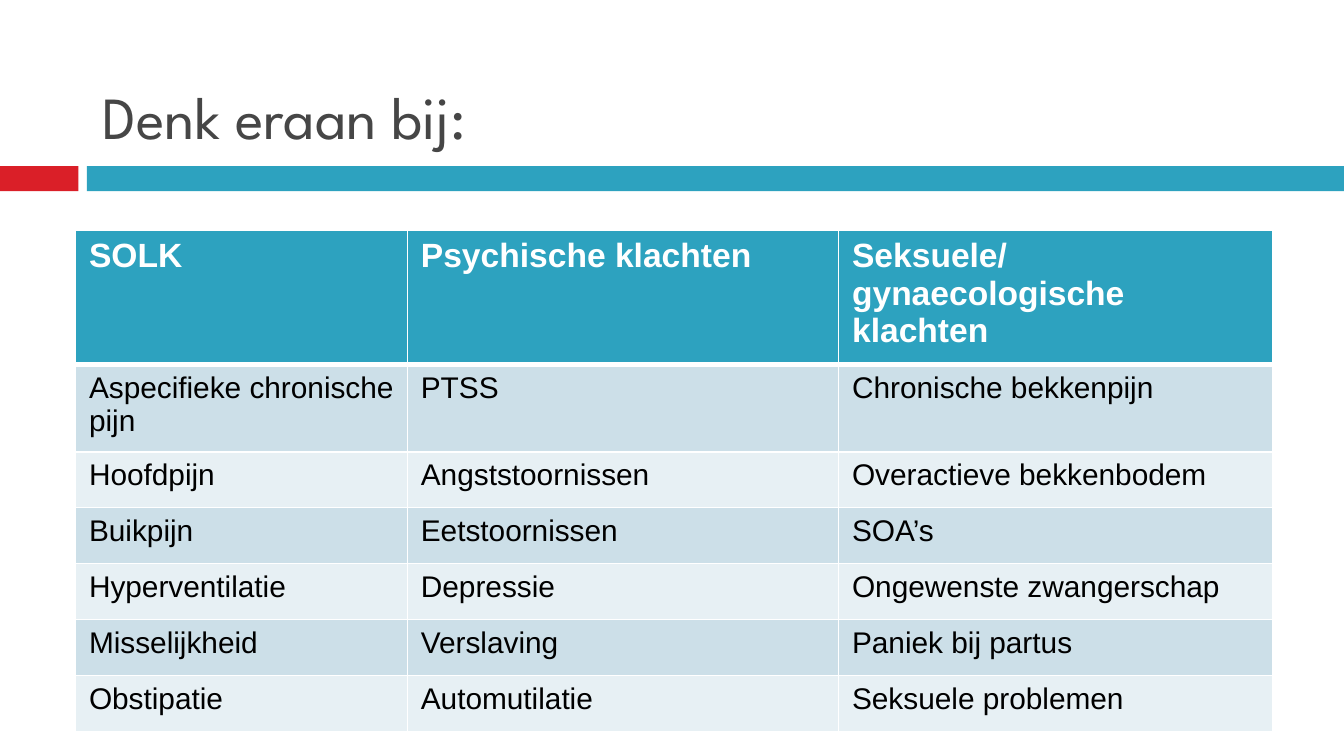
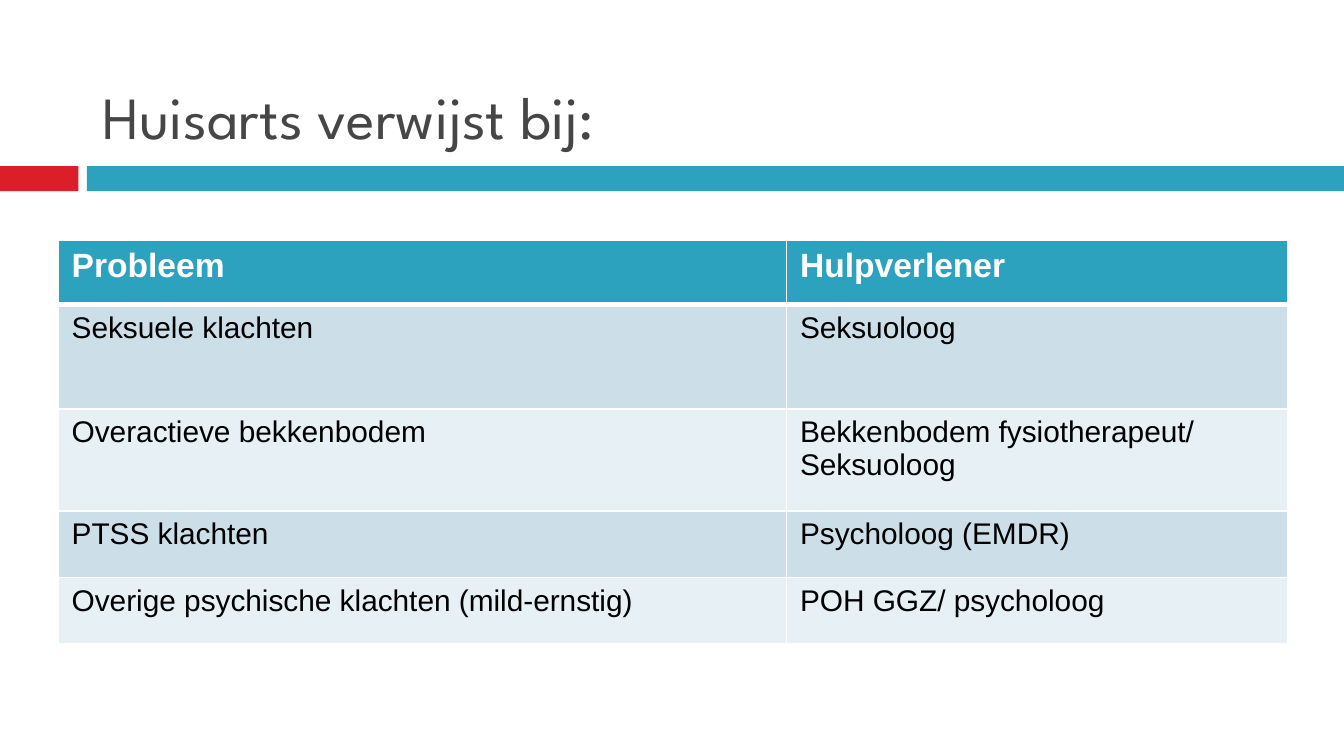
from lxml import etree
from pptx import Presentation
from pptx.dml.color import RGBColor
from pptx.enum.shapes import MSO_SHAPE
from pptx.enum.text import MSO_ANCHOR
from pptx.oxml.ns import qn
from pptx.util import Pt

RECT = MSO_SHAPE.RECTANGLE
BOTTOM = MSO_ANCHOR.BOTTOM
COLORS = {
    "accent": "DA1F28",
    "band": "2DA2BF",
    "title": "464646",
    "odd_row": "CCDFE8",
    "even_row": "E7F0F4",
    "text": "000000",
    "white": "FFFFFF",
}
TITLE_FONT, BODY_FONT = "League Spartan", "Arial"
SLIDE_W, SLIDE_H = 720, 405
TITLE_BOX = (48, 9.4, 642, 79.2)
BAND_BOX = (0, 89, SLIDE_W, 13.4)

COMPLAINTS = [
    ("SOLK", "Psychische klachten", "Seksuele/ gynaecologische klachten"),
    ("Aspecifieke chronische pijn", "PTSS", "Chronische bekkenpijn"),
    ("Hoofdpijn", "Angststoornissen", "Overactieve bekkenbodem"),
    ("Buikpijn", "Eetstoornissen", "SOA’s"),
    ("Hyperventilatie", "Depressie", "Ongewenste zwangerschap"),
    ("Misselijkheid", "Verslaving", "Paniek bij partus"),
    ("Obstipatie", "Automutilatie", "Seksuele problemen"),
]
REFERRALS = [
    ("Probleem", "Hulpverlener"),
    ("Seksuele klachten", "Seksuoloog"),
    ("Overactieve bekkenbodem", "Bekkenbodem fysiotherapeut/ Seksuoloog"),
    ("PTSS klachten", "Psycholoog (EMDR)"),
    ("Overige psychische klachten (mild-ernstig)", "POH GGZ/ psycholoog"),
]


def rgb(name):
    return RGBColor.from_string(COLORS[name])


def style_text(tf, font, size, color, bold=False):
    for p in tf.paragraphs:
        for r in p.runs:
            r.font.name = font
            r.font.size = Pt(size)
            r.font.bold = bold
            r.font.color.rgb = rgb(color)


def add_bar(s, x, y, w, h, color):
    sp = s.shapes.add_shape(RECT, Pt(x), Pt(y), Pt(w), Pt(h))
    sp.shadow.inherit = False
    sp.fill.solid()
    sp.fill.fore_color.rgb = rgb(color)
    sp.line.fill.background()


def add_band(s, box):
    x, y, w, h = box
    accent_w, gap = 42, 4.6
    add_bar(s, x, y, accent_w, h, "accent")
    add_bar(s, x + accent_w + gap, y, w - accent_w - gap, h, "band")


def add_title(s, box, text):
    tf = s.shapes.add_textbox(*map(Pt, box)).text_frame
    tf.word_wrap = True
    tf.vertical_anchor = BOTTOM
    tf.margin_left = tf.margin_right = tf.margin_top = tf.margin_bottom = Pt(7.2)
    tf.text = text
    style_text(tf, TITLE_FONT, 32, "title")


def set_borders(cell, top, bottom):
    tc_pr = cell._tc.get_or_add_tcPr()
    for tag, width in (("lnL", 1), ("lnR", 1), ("lnT", top), ("lnB", bottom)):
        ln = etree.SubElement(tc_pr, qn(f"a:{tag}"), w=str(Pt(width)))
        fill = etree.SubElement(ln, qn("a:solidFill"))
        etree.SubElement(fill, qn("a:srgbClr"), val=COLORS["white"])


def style_cell(cell, row):
    header = row == 0
    set_borders(cell, 3 if row == 1 else 1, 3 if header else 1)
    cell.fill.solid()
    if header:
        cell.fill.fore_color.rgb = rgb("band")
        style_text(cell.text_frame, BODY_FONT, 18, "white", True)
    else:
        cell.fill.fore_color.rgb = rgb("odd_row" if row % 2 else "even_row")
        style_text(cell.text_frame, BODY_FONT, 16, "text")


def add_grid(s, x, y, widths, heights, rows):
    table = s.shapes.add_table(len(heights), len(widths), Pt(x), Pt(y),
                               Pt(sum(widths)), Pt(sum(heights))).table
    for column, w in zip(table.columns, widths):
        column.width = Pt(w)
    for i, (h, texts) in enumerate(zip(heights, rows)):
        table.rows[i].height = Pt(h)
        for j, text in enumerate(texts):
            cell = table.cell(i, j)
            cell.text_frame.text = text
            style_cell(cell, i)


def add_table_slide(prs, title, x, y, widths, heights, rows):
    s = prs.slides.add_slide(prs.slide_layouts[6])
    add_band(s, BAND_BOX)
    add_title(s, TITLE_BOX, title)
    add_grid(s, x, y, widths, heights, rows)


def main():
    prs = Presentation()
    prs.slide_width, prs.slide_height = Pt(SLIDE_W), Pt(SLIDE_H)
    add_table_slide(prs, "Denk eraan bij:", 40.5, 123.4,
                    [177.8, 231, 232.6], [52, 46.6] + [30] * 5, COMPLAINTS)
    add_table_slide(prs, "Huisarts verwijst bij:", 31.2, 128.8,
                    [390.2, 268.4], [34.4, 55.8, 54.8, 35.6, 35.6], REFERRALS)
    prs.save("out.pptx")


if __name__ == "__main__":
    main()
